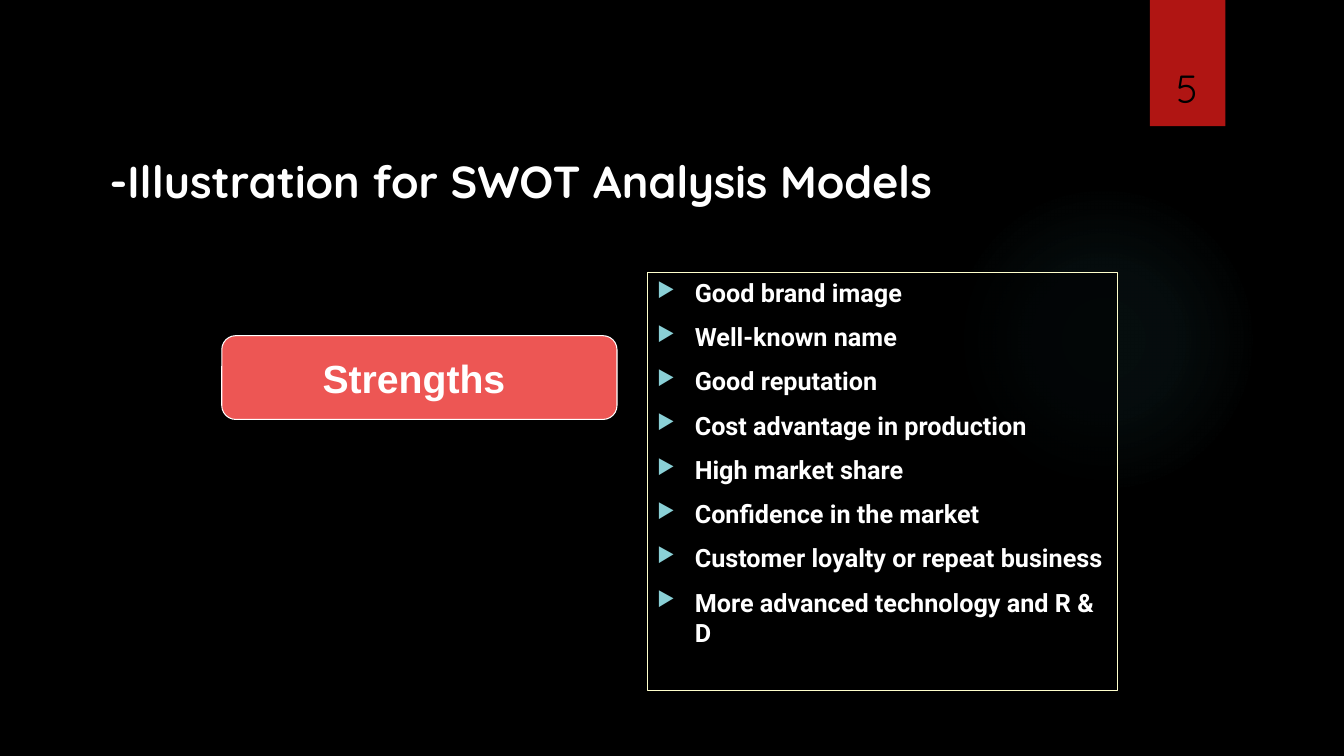
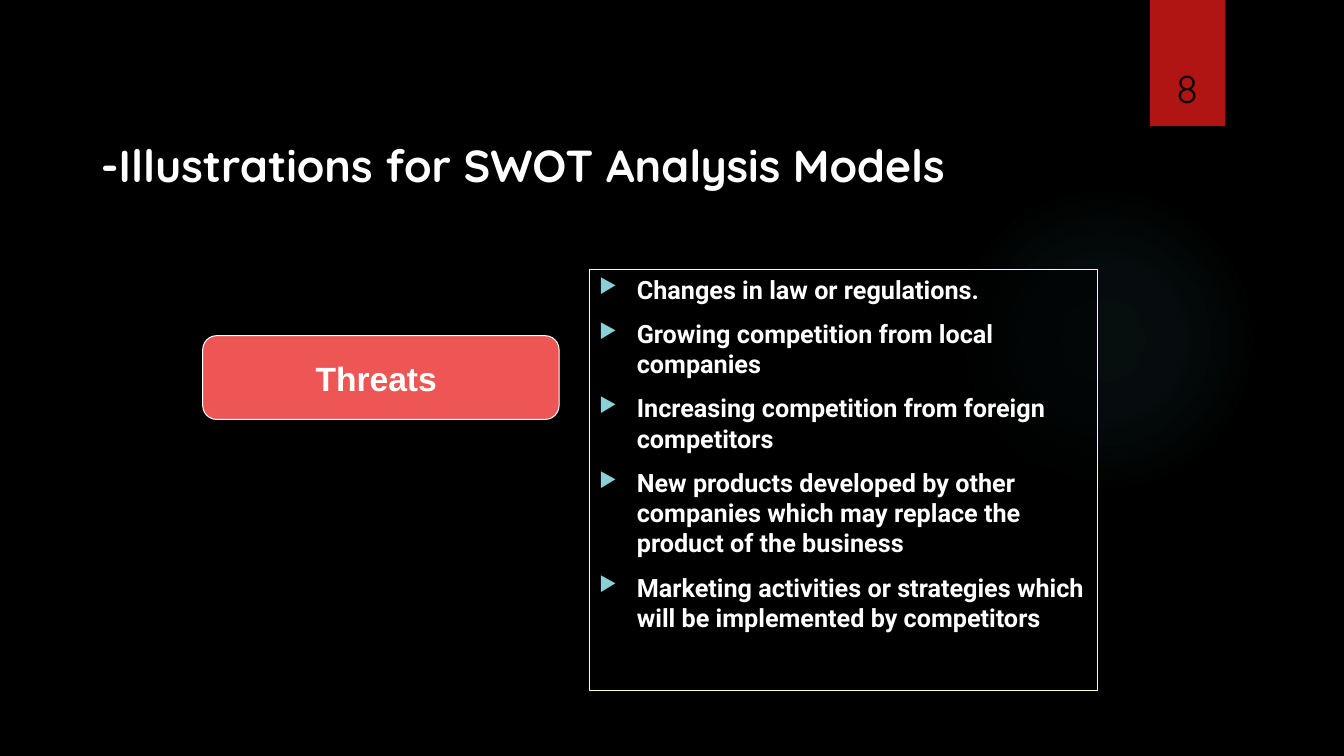
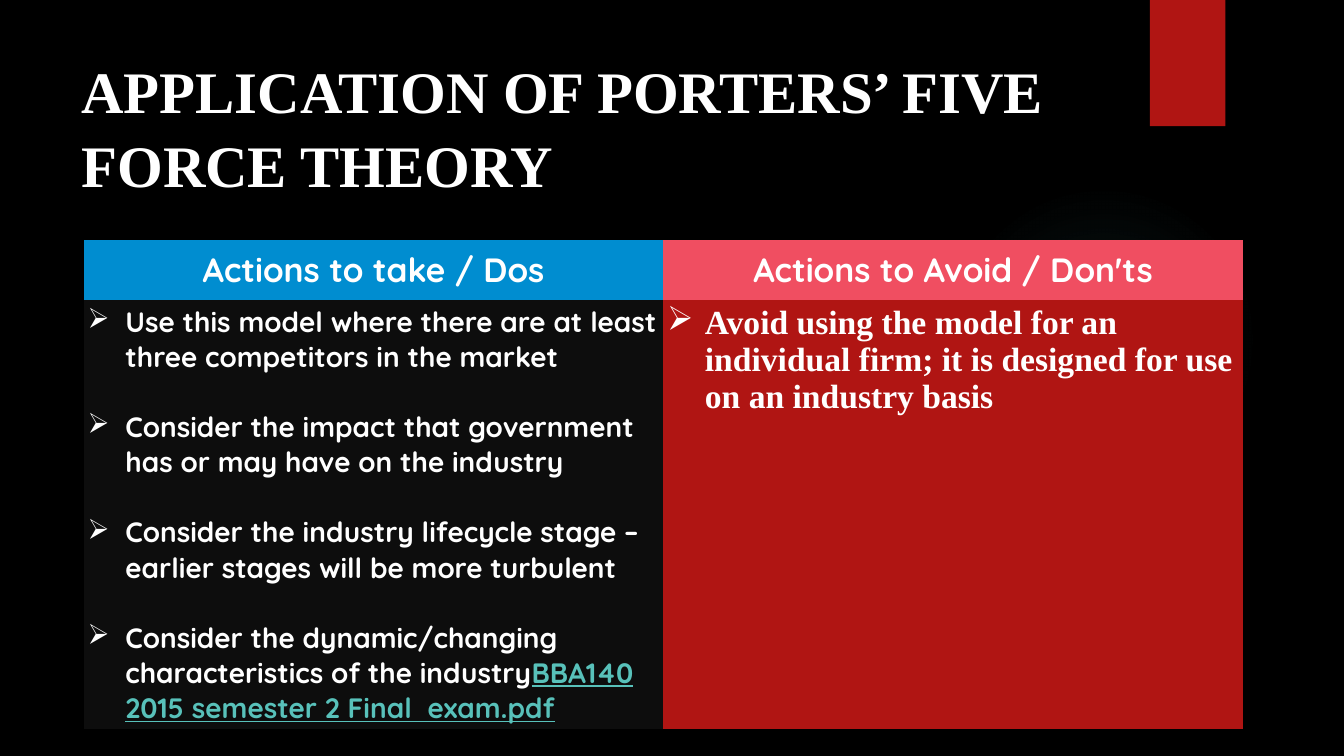
from dataclasses import dataclass

from lxml.etree import SubElement
from pptx import Presentation
from pptx.dml.color import RGBColor
from pptx.enum.shapes import MSO_SHAPE
from pptx.enum.text import MSO_ANCHOR, MSO_AUTO_SIZE, PP_ALIGN
from pptx.oxml import parse_xml
from pptx.oxml.ns import nsdecls, qn
from pptx.util import Cm, Pt


@dataclass(frozen=True)
class Theme:
    black: str = "000000"
    white: str = "FFFFFF"
    red: str = "B01513"
    glow: str = "50B9C1"
    label: str = "ED5654"
    frame: str = "FFFFCC"
    marker: str = "8AD0D6"
    link: str = "58C1BA"
    dos: str = "008DD0"
    donts: str = "F04E61"
    dark: str = "0D0D0D"
    display: str = "Quicksand"
    body: str = "Roboto"
    serif: str = "Times New Roman"
    sans: str = "Arial"
    heading: int = 42
    title: int = 32
    large: int = 28
    medium: int = 24
    small: int = 20
    item: int = 18


T = Theme()
NO_GRID = "{2D5ABB26-0587-4C30-8999-92F81FD0307C}"


def rgb(color):
    return RGBColor.from_string(color)


def cm(box):
    return [Cm(v) for v in box]


def write(p, text, size, font, color=T.white, bold=True, underline=None, align=None):
    r = p.add_run()
    r.text = text
    f = r.font
    f.size, f.name, f.bold, f.underline = Pt(size), font, bold, underline
    f.color.rgb = rgb(color)
    if align is not None:
        p.alignment = align
    return r


def bullet(p, char, color=None, percent=None):
    pPr = p._p.get_or_add_pPr()
    pPr.set("marL", str(Cm(0.95)))
    pPr.set("indent", str(-Cm(0.95)))
    if color:
        SubElement(SubElement(pPr, qn("a:buClr")), qn("a:srgbClr")).set("val", color)
    if percent:
        SubElement(pPr, qn("a:buSzPct")).set("val", str(percent * 1000))
    SubElement(pPr, qn("a:buChar")).set("char", char)


def write_list(tf, items, char, gap, color=None, percent=None, **fmt):
    for i, text in enumerate(items):
        p = tf.add_paragraph() if i else tf.paragraphs[0]
        bullet(p, char, color, percent)
        if i:
            p.space_before = Pt(gap)
        write(p, text, **fmt)


def add_block(shapes, kind, box, fill=None, line=None):
    sp = shapes.add_shape(kind, *cm(box))
    sp.shadow.inherit = False
    if fill:
        sp.fill.solid()
        sp.fill.fore_color.rgb = rgb(fill)
    if line:
        sp.line.color.rgb = rgb(line)
        sp.line.width = Pt(0.75)
    else:
        sp.line.fill.background()
    return sp


def fill_glow(sp):
    stops = "".join(
        f'<a:gs pos="{pos * 1000}"><a:srgbClr val="{T.glow}">'
        f'<a:alpha val="{alpha * 1000}"/></a:srgbClr></a:gs>'
        for pos, alpha in ((0, 7), (36, 6), (69, 0)))
    grad = parse_xml(
        f'<a:gradFill {nsdecls("a")} rotWithShape="1"><a:gsLst>{stops}</a:gsLst>'
        '<a:path path="circle"><a:fillToRect l="50000" t="50000" r="50000" b="50000"/>'
        '</a:path></a:gradFill>')
    sp.element.spPr.find(qn("a:prstGeom")).addnext(grad)


def decorate_layout(layout, s):
    glow = add_block(s.shapes, MSO_SHAPE.OVAL, (23.9, 4.65, 7.82, 7.82))
    fill_glow(glow)
    ribbon = add_block(s.shapes, MSO_SHAPE.RECTANGLE, (28.98, 0, 1.9, 3.18), T.red)
    for i, sp in enumerate((glow, ribbon)):
        sp.element.nvSpPr.cNvPr.set("id", str(101 + i))
        layout.shapes.element.insert(2 + i, sp.element)


def set_title(s, box, text, size, font, bottom=0.13, spacing=1.0):
    sp = s.shapes.title
    sp.left, sp.top, sp.width, sp.height = cm(box)
    tf = sp.text_frame
    tf.word_wrap = True
    tf.auto_size = MSO_AUTO_SIZE.NONE
    tf.vertical_anchor = MSO_ANCHOR.BOTTOM
    tf.margin_bottom = Cm(bottom)
    p = tf.paragraphs[0]
    p.line_spacing = spacing
    write(p, text, size, font, align=PP_ALIGN.LEFT)


def add_number(s, box, number):
    tf = s.shapes.add_textbox(*cm(box)).text_frame
    tf.word_wrap = True
    tf.vertical_anchor = MSO_ANCHOR.BOTTOM
    write(tf.paragraphs[0], number, T.large, T.display, T.black, False,
          align=PP_ALIGN.CENTER)


def add_factor(s, box, label, label_size, label_w, items):
    x, y, w, h = box
    left = label_w + 0.76
    frame = add_block(s.shapes, MSO_SHAPE.RECTANGLE, (x + left, y, w - left, h),
                      T.black, T.frame)
    color = frame.element.spPr.find(qn("a:solidFill")).find(qn("a:srgbClr"))
    SubElement(color, qn("a:alpha")).set("val", "50000")
    tf = frame.text_frame
    tf.word_wrap = True
    tf.vertical_anchor = MSO_ANCHOR.TOP
    write_list(tf, items, "▶", 10, T.marker, 80, size=T.item, font=T.body)
    for p in tf.paragraphs:
        p.alignment = PP_ALIGN.LEFT

    pill = add_block(s.shapes, MSO_SHAPE.ROUNDED_RECTANGLE,
                     (x, y + h - 8.94, label_w, 2.11), T.label, T.white)
    tf = pill.text_frame
    tf.word_wrap = False
    tf.vertical_anchor = MSO_ANCHOR.MIDDLE
    write(tf.paragraphs[0], label, label_size, T.sans, align=PP_ALIGN.CENTER)


def add_actions(s, box, columns):
    x, y, w, h = box
    gf = s.shapes.add_table(2, len(columns), *cm(box))
    for style in gf.element.iter(qn("a:tableStyleId")):
        style.text = NO_GRID
    tbl = gf.table
    tbl.horz_banding = False
    tbl.rows[0].height, tbl.rows[1].height = Cm(1.52), Cm(h - 1.52)
    for i, (head, head_fill, items, fill, size, font) in enumerate(columns):
        tbl.columns[i].width = Cm(w / len(columns))
        top, body = tbl.cell(0, i), tbl.cell(1, i)
        for cell, color in ((top, head_fill), (body, fill)):
            cell.fill.solid()
            cell.fill.fore_color.rgb = rgb(color)
            cell.margin_left = cell.margin_right = Cm(0.1)
            cell.margin_top = cell.margin_bottom = Cm(0.1)
        top.vertical_anchor = MSO_ANCHOR.MIDDLE
        write(top.text_frame.paragraphs[0], head, T.medium, T.display,
              align=PP_ALIGN.CENTER)
        write_list(body.text_frame, items, "➢", 25, size=size, font=font)
    return tbl


def swot_slide(s, title_box, title, number, **factor):
    set_title(s, title_box, title, T.title, T.display, bottom=0.28)
    add_number(s, (28.75, 0.81, 2.34, 2.13), number)
    add_factor(s, **factor)


def porter_slide(s):
    set_title(s, (1.8, 1.27, 26.14, 3.89), "APPLICATION OF PORTERS’ FIVE FORCE THEORY",
              T.heading, T.serif, spacing=1.05)
    dos = ["Use this model where there are at least three competitors in the market",
           "Consider the impact that government has or may have on the industry",
           "Consider the industry lifecycle stage – earlier stages will be more turbulent",
           "Consider the dynamic/changing characteristics of the industry"]
    donts = ["Avoid using the model for an individual firm; "
             "it is designed for use on an industry basis"]
    tbl = add_actions(s, (2.11, 6.05, 29.21, 12.09), [
        ("Actions to take / Dos", T.dos, dos, T.dark, T.small, T.display),
        ("Actions to Avoid / Don'ts", T.donts, donts, T.red, T.medium, T.serif)])
    write(tbl.cell(1, 0).text_frame.paragraphs[-1],
          "BBA140 2015 semester 2 Final  exam.pdf", T.small, T.display, T.link,
          underline=True)


def main():
    prs = Presentation()
    prs.slide_width, prs.slide_height = Cm(33.87), Cm(19.05)
    bg = prs.slide_master.background.fill
    bg.solid()
    bg.fore_color.rgb = rgb(T.black)
    layout = prs.slide_layouts[5]
    strengths, threats, porter = [prs.slides.add_slide(layout) for _ in range(3)]
    decorate_layout(layout, strengths)

    swot_slide(strengths, (2.51, 2.34, 25.86, 3.18),
               "-Illustration for SWOT Analysis Models", "5",
               box=(5.59, 6.86, 22.58, 10.54),
               label="Strengths ", label_size=T.large, label_w=9.96,
               items=["Good brand image",
                      "Well-known name",
                      "Good reputation",
                      "Cost advantage in production",
                      "High market share",
                      "Confidence in the market",
                      "Customer loyalty or repeat business",
                      "More advanced technology and R & D"])
    swot_slide(threats, (2.29, 1.93, 25.58, 3.18),
               "-Illustrations for SWOT Analysis Models", "8",
               box=(5.11, 6.78, 22.55, 10.62),
               label="Threats ", label_size=T.medium, label_w=8.98,
               items=["Changes in law or regulations.",
                      "Growing competition from local companies",
                      "Increasing competition from foreign competitors",
                      "New products developed by other companies which may "
                      "replace the product of the business",
                      "Marketing activities or strategies which will be "
                      "implemented by competitors"])
    porter_slide(porter)
    prs.save("out.pptx")


if __name__ == "__main__":
    main()
